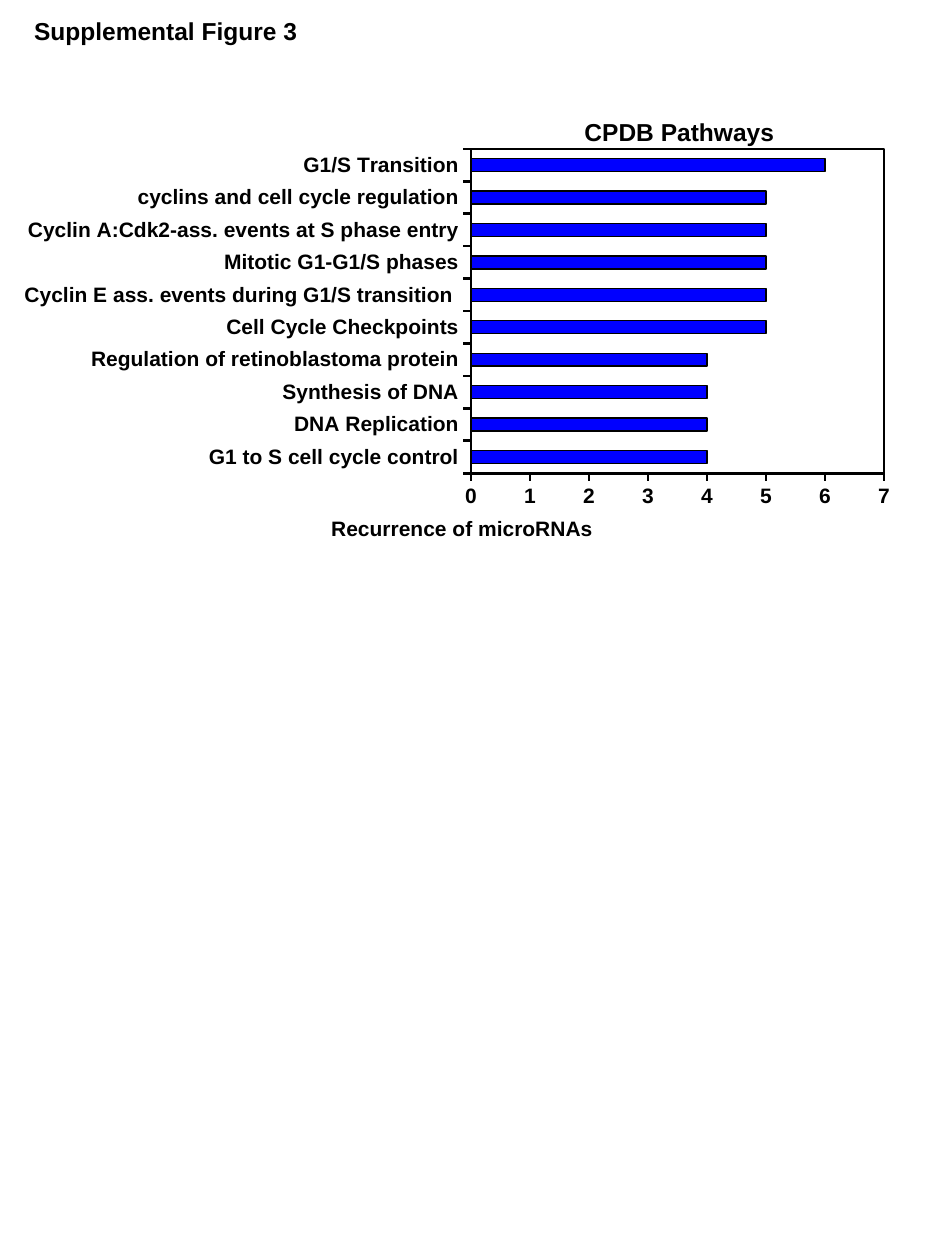
from dataclasses import dataclass
from pptx import Presentation
from pptx.chart.data import CategoryChartData
from pptx.dml.color import RGBColor
from pptx.enum.chart import XL_CHART_TYPE, XL_TICK_MARK
from pptx.enum.text import MSO_ANCHOR, MSO_AUTO_SIZE, PP_ALIGN
from pptx.oxml import parse_xml
from pptx.oxml.ns import nsdecls, qn
from pptx.util import Inches, Pt


@dataclass(frozen=True)
class Theme:
    """Colours, font and type sizes of the slide."""
    ink: RGBColor = RGBColor(0, 0, 0)
    bar: RGBColor = RGBColor(0, 0, 255)
    font: str = "Arial"
    head: int = 14
    label: int = 12
    axis: float = 1.5
    edge: float = 0.75


@dataclass(frozen=True)
class Box:
    """A place on the slide, in inches."""
    left: float
    top: float
    width: float
    height: float

    def emu(self) -> tuple:
        """Return the four lengths for python-pptx."""
        return tuple(map(Inches, (self.left, self.top, self.width, self.height)))


@dataclass(frozen=True)
class Pathway:
    """One bar of the chart."""
    name: str
    count: int


THEME = Theme()
PATHWAYS = [
    Pathway("G1 to S cell cycle control", 4),
    Pathway("DNA Replication", 4),
    Pathway("Synthesis of DNA", 4),
    Pathway("Regulation of retinoblastoma protein", 4),
    Pathway("Cell Cycle Checkpoints", 5),
    Pathway("Cyclin E ass. events during G1/S transition ", 5),
    Pathway("Mitotic G1-G1/S phases", 5),
    Pathway("Cyclin A:Cdk2-ass. events at S phase entry", 5),
    Pathway("cyclins and cell cycle regulation", 5),
    Pathway("G1/S Transition", 6),
]


def style(font, size: int) -> None:
    """Give a font the bold look of the slide."""
    font.name, font.size, font.bold = THEME.font, Pt(size), True
    font.color.rgb = THEME.ink


def write(frame, text: str, *, size: int, align=None) -> None:
    """Put one formatted line of text in a frame."""
    para = frame.paragraphs[0]
    para.alignment = align
    run = para.add_run()
    run.text = text
    style(run.font, size)


def label(shape, text: str, box: Box) -> None:
    """Place a shape and set it as a heading that does not wrap."""
    shape.left, shape.top, shape.width, shape.height = box.emu()
    frame = shape.text_frame
    frame.word_wrap = False
    frame.auto_size = MSO_AUTO_SIZE.SHAPE_TO_FIT_TEXT
    frame.vertical_anchor = MSO_ANCHOR.TOP
    write(frame, text, size=THEME.head, align=PP_ALIGN.LEFT)


def layout(node, index: int, **parts) -> None:
    """Set a manual chart layout as the child at the given index."""
    for old in node.findall(qn("c:layout")):
        node.remove(old)
    body = "".join(f'<c:{key} val="{val}"/>' for key, val in parts.items())
    node.insert(index, parse_xml(
        f'<c:layout {nsdecls("c")}><c:manualLayout>{body}</c:manualLayout></c:layout>'))


def draw_axis(axis) -> None:
    """Format the line, ticks and labels of an axis."""
    axis.has_major_gridlines = False
    axis.major_tick_mark = XL_TICK_MARK.OUTSIDE
    axis.minor_tick_mark = XL_TICK_MARK.NONE
    axis.format.line.color.rgb = THEME.ink
    axis.format.line.width = Pt(THEME.axis)
    style(axis.tick_labels.font, THEME.label)


def draw_chart(slide, box: Box, rows: list[Pathway]) -> None:
    """Draw the bar chart of pathways."""
    data = CategoryChartData()
    data.categories = [row.name for row in rows]
    data.add_series("Series 1", [row.count for row in rows])
    chart = slide.shapes.add_chart(XL_CHART_TYPE.BAR_CLUSTERED, *box.emu(), data).chart
    chart.has_legend = chart.has_title = False
    style(chart.font, THEME.label)
    plot = chart.plots[0]
    plot.gap_width, plot.vary_by_categories = 150, False
    bars = plot.series[0].format
    bars.fill.solid()
    bars.fill.fore_color.rgb = THEME.bar
    bars.line.color.rgb = THEME.ink
    bars.line.width = Pt(THEME.edge)
    draw_axis(chart.category_axis)
    axis = chart.value_axis
    draw_axis(axis)
    axis.minimum_scale, axis.maximum_scale, axis.major_unit = 0, 7, 1
    title = axis.axis_title
    write(title.text_frame, "Recurrence of microRNAs", size=THEME.label)
    layout(title._element, 1, xMode="edge", yMode="edge", x=0.35, y=0.92)
    area = chart._chartSpace.chart.plotArea
    layout(area, 0, layoutTarget="inner", xMode="edge", yMode="edge",
           x=0.511, y=0.046, w=0.463, h=0.781)
    area.append(parse_xml(
        f'<c:spPr {nsdecls("c", "a")}><a:noFill/><a:ln w="{Pt(THEME.edge)}"><a:solidFill>'
        f'<a:srgbClr val="{THEME.ink}"/></a:solidFill></a:ln></c:spPr>'))


def main() -> None:
    """Build and save the slide."""
    deck = Presentation()
    deck.slide_width, deck.slide_height = Inches(7.5), Inches(10)
    slide = deck.slides.add_slide(deck.slide_layouts[5])
    label(slide.shapes.title, "Supplemental Figure 3", Box(0.17, 0.08, 2.3, 0.34))
    draw_chart(slide, Box(0.12, 1.03, 7.08, 3.31), PATHWAYS)
    box = Box(4.54, 0.88, 1.72, 0.34)
    label(slide.shapes.add_textbox(*box.emu()), "CPDB Pathways", box)
    deck.save("out.pptx")


if __name__ == "__main__":
    main()
